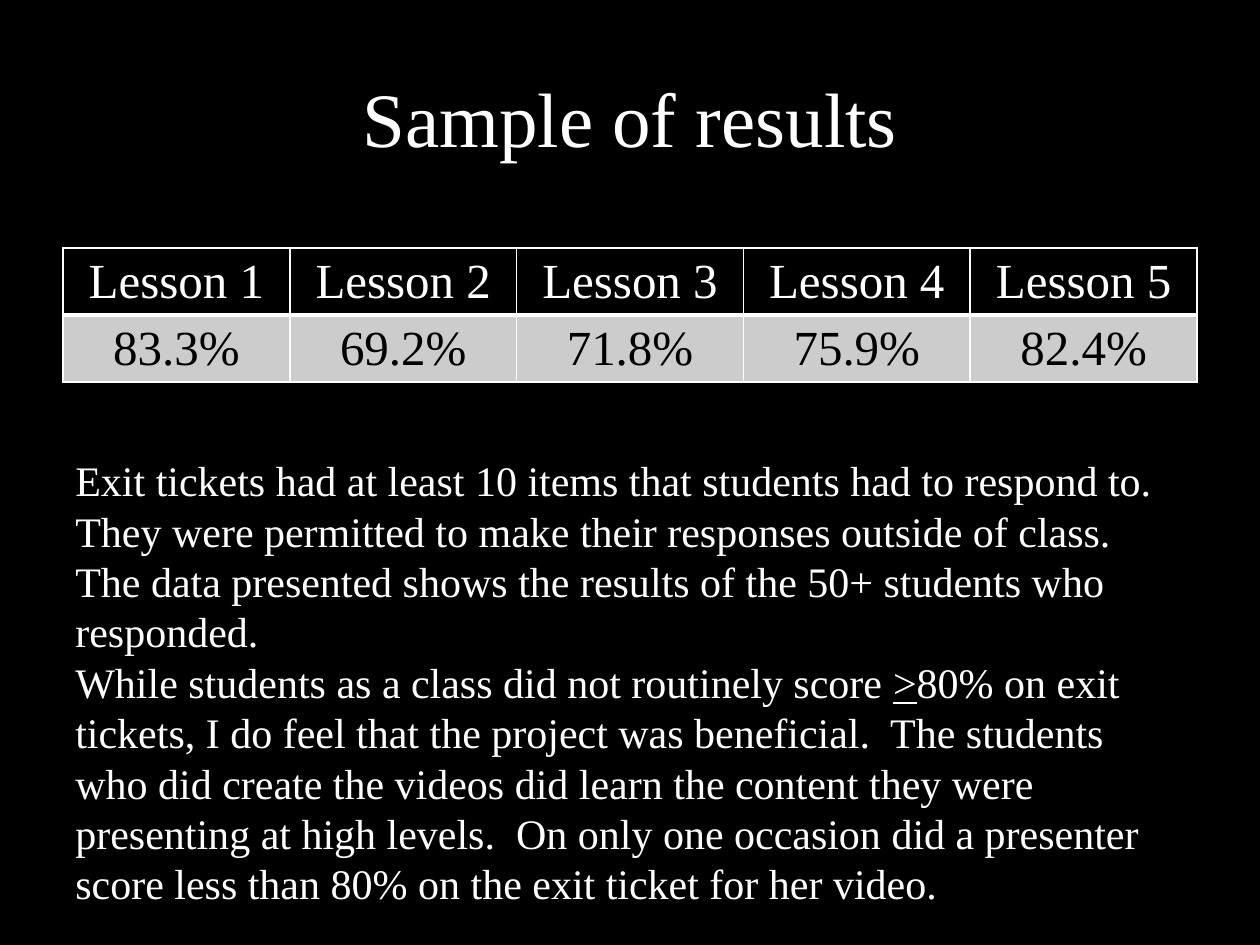
import pptx
import pptx.dml.color
import pptx.enum.text
import pptx.oxml
import pptx.oxml.ns
import pptx.util

Cm = pptx.util.Cm
Pt = pptx.util.Pt
RGBColor = pptx.dml.color.RGBColor
PP_ALIGN = pptx.enum.text.PP_ALIGN
MSO_ANCHOR = pptx.enum.text.MSO_ANCHOR
MSO_AUTO_SIZE = pptx.enum.text.MSO_AUTO_SIZE

BLACK = RGBColor(0x00, 0x00, 0x00)
WHITE = RGBColor(0xFF, 0xFF, 0xFF)
GREY = RGBColor(0xCC, 0xCC, 0xCC)
FONT = "Times New Roman"

TITLE = "Sample of results"
SCORES = {
    "Lesson 1": "83.3%",
    "Lesson 2": "69.2%",
    "Lesson 3": "71.8%",
    "Lesson 4": "75.9%",
    "Lesson 5": "82.4%",
}
EXIT_TICKETS = (
    "Exit tickets had at least 10 items that students had to respond to.  "
    "They were permitted to make their responses outside of class.  "
    "The data presented shows the results of the 50+ students who responded."
)
BEFORE_SIGN = "While students as a class did not routinely score "
AFTER_SIGN = (
    "80% on exit tickets, I do feel that the project was beneficial.  "
    "The students who did create the videos did learn the content they were "
    "presenting at high levels.  On only one occasion did a presenter score "
    "less than 80% on the exit ticket for her video."
)


def add_run(p, text, size=24, color=WHITE, underline=None):
    r = p.add_run()
    r.text = text
    r.font.name = FONT
    r.font.size = Pt(size)
    r.font.color.rgb = color
    r.font.underline = underline


def set_borders(cell, **widths):
    """Draw white cell borders; widths in points are keyed L, R, T, B."""
    tcPr = cell._tc.get_or_add_tcPr()
    for side, width in widths.items():
        tcPr.append(pptx.oxml.parse_xml(
            f'<a:ln{side} {pptx.oxml.ns.nsdecls("a")} w="{Pt(width)}">'
            f'<a:solidFill><a:srgbClr val="{WHITE}"/></a:solidFill></a:ln{side}>'
        ))


class Deck:
    left = Cm(1.27)
    width = Cm(22.86)

    def __init__(self, prs):
        self.s = prs.slides.add_slide(prs.slide_layouts[6])
        self.s.background.fill.solid()
        self.s.background.fill.fore_color.rgb = BLACK

    def text(self, top, height, paragraphs, align=PP_ALIGN.LEFT,
             anchor=MSO_ANCHOR.TOP, auto_size=MSO_AUTO_SIZE.NONE):
        """Add a text box; each paragraph is a list of (text, format) pairs."""
        sp = self.s.shapes.add_textbox(self.left, top, self.width, height)
        tf = sp.text_frame
        tf.word_wrap = True
        tf.auto_size = auto_size
        tf.vertical_anchor = anchor
        for i, runs in enumerate(paragraphs):
            p = tf.add_paragraph() if i else tf.paragraphs[0]
            p.alignment = align
            for text, fmt in runs:
                add_run(p, text, **fmt)

    def table(self, top, height, header, values):
        sp = self.s.shapes.add_table(2, len(header), self.left, top,
                                     self.width, height)
        styles = (
            (header, BLACK, WHITE, dict(L=1, R=1, T=1, B=3)),
            (values, GREY, BLACK, dict(L=1, R=1, T=3, B=1)),
        )
        for row, (texts, fill, color, borders) in enumerate(styles):
            for col, text in enumerate(texts):
                cell = sp.table.cell(row, col)
                set_borders(cell, **borders)
                cell.fill.solid()
                cell.fill.fore_color.rgb = fill
                p = cell.text_frame.paragraphs[0]
                p.alignment = PP_ALIGN.CENTER
                add_run(p, text, size=28, color=color)


def main():
    prs = pptx.Presentation()
    prs.slide_width = Cm(25.4)
    prs.slide_height = Cm(19.05)
    deck = Deck(prs)
    deck.text(Cm(0.76), Cm(3.18), [[(TITLE, dict(size=44))]],
              align=PP_ALIGN.CENTER, anchor=MSO_ANCHOR.MIDDLE)
    deck.table(Cm(5), Cm(2.7), list(SCORES), list(SCORES.values()))
    deck.text(Cm(9.04), Cm(9.5), [
        [(EXIT_TICKETS, {})],
        [(BEFORE_SIGN, {}), (">", dict(underline=True)), (AFTER_SIGN, {})],
    ], auto_size=MSO_AUTO_SIZE.SHAPE_TO_FIT_TEXT)
    prs.save("out.pptx")


if __name__ == "__main__":
    main()
